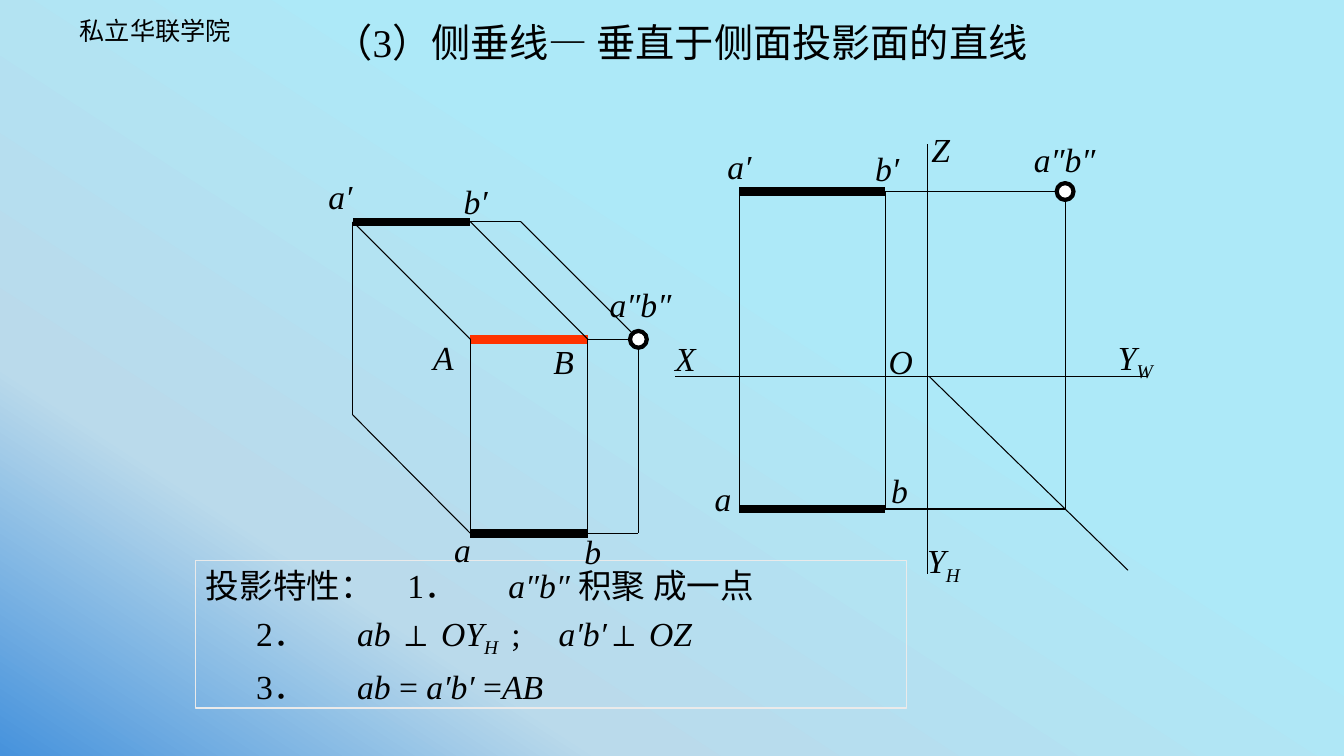
import copy

import lxml.etree
import pptx
import pptx.dml.color
import pptx.enum.shapes
import pptx.enum.text
import pptx.oxml.ns
import pptx.util

COLS, ROWS = 80, 45
INK, RED, WHITE, EDGE = "000000", "FF3300", "FFFFFF", "EAEAEA"
THIN, RING, THICK = 0.75, 3, 6
SKY = [(0, "4692DC"), (0.24, "BADAEB"), (0.62, "ADE9F8")]


def tint(code):
    return pptx.dml.color.RGBColor.from_string(code)


def add(node, tag, **attrs):
    return lxml.etree.SubElement(node, pptx.oxml.ns.qn(tag), attrs)


class Sheet:
    """Holds the text style and the current slide, measured on a grid of square cells."""

    def __init__(self, deck):
        self.cell = deck.slide_width / COLS
        self.slide = deck.slides.add_slide(deck.slide_layouts[1])
        self.font = {"name": "Times New Roman", "size": pptx.util.Pt(24), "bold": False}
        self.wide = "Noto Sans CJK JP"

    def span(self, *cells):
        return [round(n * self.cell) for n in cells]

    def sky(self, stops, angle):
        fill = self.slide.background.fill
        fill.gradient()
        first = self.slide._element.find(".//" + pptx.oxml.ns.qn("a:gs"))
        first.addnext(copy.deepcopy(first))
        for stop, (place, code) in zip(fill.gradient_stops, stops):
            stop.position = place
            stop.color.rgb = tint(code)
        fill.gradient_angle = angle

    def place(self, shape, area):
        for key, val in zip(("left", "top", "width", "height"), self.span(*area)):
            setattr(shape, key, val)

    def fill_in(self, para, runs, **style):
        for text, kind in runs:
            run = para.add_run()
            run.text = text
            look = {**self.font, "italic": kind in ("it", "sub"), **style}
            for key, val in look.items():
                setattr(run.font, key, val)
            run.font.color.rgb = tint(INK)
            props = run._r.get_or_add_rPr()
            add(props, "a:ea", typeface=self.wide)
            if kind == "sub":
                props.set("baseline", "-25000")

    def frame(self, shape, **form):
        base = {"word_wrap": True, "auto_size": pptx.enum.text.MSO_AUTO_SIZE.NONE}
        for key, val in {**base, **form}.items():
            setattr(shape.text_frame, key, val)
        return shape.text_frame

    def title(self, text, area):
        shape = self.slide.shapes.title
        self.place(shape, area)
        frame = self.frame(shape, vertical_anchor=pptx.enum.text.MSO_ANCHOR.MIDDLE)
        para = frame.paragraphs[0]
        para.alignment = pptx.enum.text.PP_ALIGN.CENTER
        self.fill_in(para, [(text, "")], size=pptx.util.Pt(28))

    def body(self, lines, area):
        shape = self.slide.placeholders[1]
        self.place(shape, area)
        shape.line.color.rgb = tint(EDGE)
        shape.line.width = pptx.util.Pt(1)
        frame = self.frame(shape)
        for num, (tabs, runs) in enumerate(lines):
            para = frame.add_paragraph() if num else frame.paragraphs[0]
            para.space_before = pptx.util.Pt(5 if num else 0)
            props = para._p.get_or_add_pPr()
            for key in ("marL", "indent"):
                props.set(key, "0")
            add(props, "a:buNone")
            stops = add(props, "a:tabLst")
            for pos in self.span(*tabs):
                add(stops, "a:tab", pos=str(pos), algn="l")
            self.fill_in(para, runs)

    def label(self, runs, area, pad=None, **style):
        shape = self.slide.shapes.add_textbox(*self.span(*area))
        sides = ("left", "top", "right", "bottom")
        form = {f"margin_{side}": pad for side in sides} if pad else {}
        self.fill_in(self.frame(shape, **form).paragraphs[0], runs, **style)

    def line(self, ends, width=THIN, code=INK):
        kind = pptx.enum.shapes.MSO_CONNECTOR.STRAIGHT
        shape = self.slide.shapes.add_connector(kind, *self.span(*ends))
        shape.line.color.rgb = tint(code)
        shape.line.width = pptx.util.Pt(width)
        add(shape._element.spPr, "a:effectLst")

    def ring(self, x, y):
        kind = pptx.enum.shapes.MSO_SHAPE.OVAL
        shape = self.slide.shapes.add_shape(kind, *self.span(x - 0.5, y - 0.5, 1, 1))
        shape.shadow.inherit = False
        shape.fill.solid()
        shape.fill.fore_color.rgb = tint(WHITE)
        shape.line.color.rgb = tint(INK)
        shape.line.width = pptx.util.Pt(RING)


def solid(sheet):
    back, left, right, side = 21, 28, 35, 38
    top, mid, low, base = 13.2, 20.2, 24.7, 31.75
    sheet.line((left, mid, right, mid), THICK, RED)
    for ends in (
        (left, base, side, base), (left, mid, left, base), (left, top, 31, top),
        (right, mid, side, mid), (side, mid, side, base), (back, top, back, low),
        (back, low, left, base), (back, top, left, mid), (31, top, side, mid),
        (right, mid, right, base), (left, top, right, mid),
    ):
        sheet.line(ends)
    sheet.line((left, base, right, base), THICK)
    sheet.line((back, top, left, top), THICK)
    sheet.ring(side, mid)


def views(sheet):
    left, right, axis, side = 44, 52.7, 55.2, 63.4
    top, mid, base = 11.4, 22.4, 30.3
    for ends in (
        (40.2, mid, 68.35, mid), (axis, 8.6, axis, 34.15), (axis + 0.1, mid, 67.15, 33.95),
        (right, base, side, base), (side, top, side, base), (right, top, right, base),
        (left, top, left, base), (right, top, side, top),
    ):
        sheet.line(ends)
    for row in (top, base):
        sheet.line((left, row, right, row), THICK)
    sheet.ring(side, top)


def main():
    deck = pptx.Presentation()
    deck.slide_width = pptx.util.Inches(13.33)
    deck.slide_height = round(deck.slide_width * ROWS / COLS)
    sheet = Sheet(deck)
    sheet.sky(SKY, 57)
    sheet.label([("私立华联学院", "")], (4.45, 0.6, 17.65, 2.4), pptx.util.Inches(0.05),
                size=pptx.util.Pt(18), name=sheet.wide)
    sheet.body([
        ((10.75, 15.25), [("投影特性：\t1．\t", ""), ("a″b″ ", "it"), ("积聚 成一点", "")]),
        ((10.5, 14.95, 26.65), [
            ("\t2．\t", ""), ("ab ", "it"), ("⊥ ", ""), ("OY", "it"), ("H ", "sub"),
            (" ;\t", ""), ("a′b′", "it"), ("⊥ ", ""), ("OZ", "it")]),
        ((10.5, 14.95), [
            ("\t3．\t", ""), ("ab", "it"), (" = ", ""), ("a′b′ ", "it"), ("=", ""),
            ("AB", "it")]),
    ], (11.65, 33.35, 42.3, 8.8))
    solid(sheet)
    views(sheet)
    for text, sub, x, y, wide in (
        ("A", "", 25.2, 19.75, 4.4), ("B", "", 32.35, 20, 4.5), ("b", "", 34.2, 31.3, 3),
        ("a′", "", 18.95, 10.2, 6), ("a″b″", "", 35.7, 16.6, 9), ("a", "", 26.45, 31.2, 2),
        ("b′", "", 27, 10.45, 6), ("Z", "", 54.85, 7.4, 2.8), ("X", "", 39.6, 19.8, 2.95),
        ("a″b″", "", 60.95, 8, 7.4), ("b′", "", 51.5, 8.5, 6.9), ("a", "", 41.95, 28.15, 3.8),
        ("O", "", 52.3, 20, 2.95), ("Y", "H", 54.6, 31.85, 4), ("Y", "W", 65.95, 19.75, 4.75),
        ("a′", "", 42.7, 8.4, 6.3), ("b", "", 52.45, 27.65, 3.65),
    ):
        runs = [(text, "it")] + ([(sub, "sub")] if sub else [])
        sheet.label(runs, (x, y, wide, 3))
    sheet.title("（3）侧垂线— 垂直于侧面投影面的直线", (15, 0, 51, 5))
    deck.save("out.pptx")


if __name__ == "__main__":
    main()
